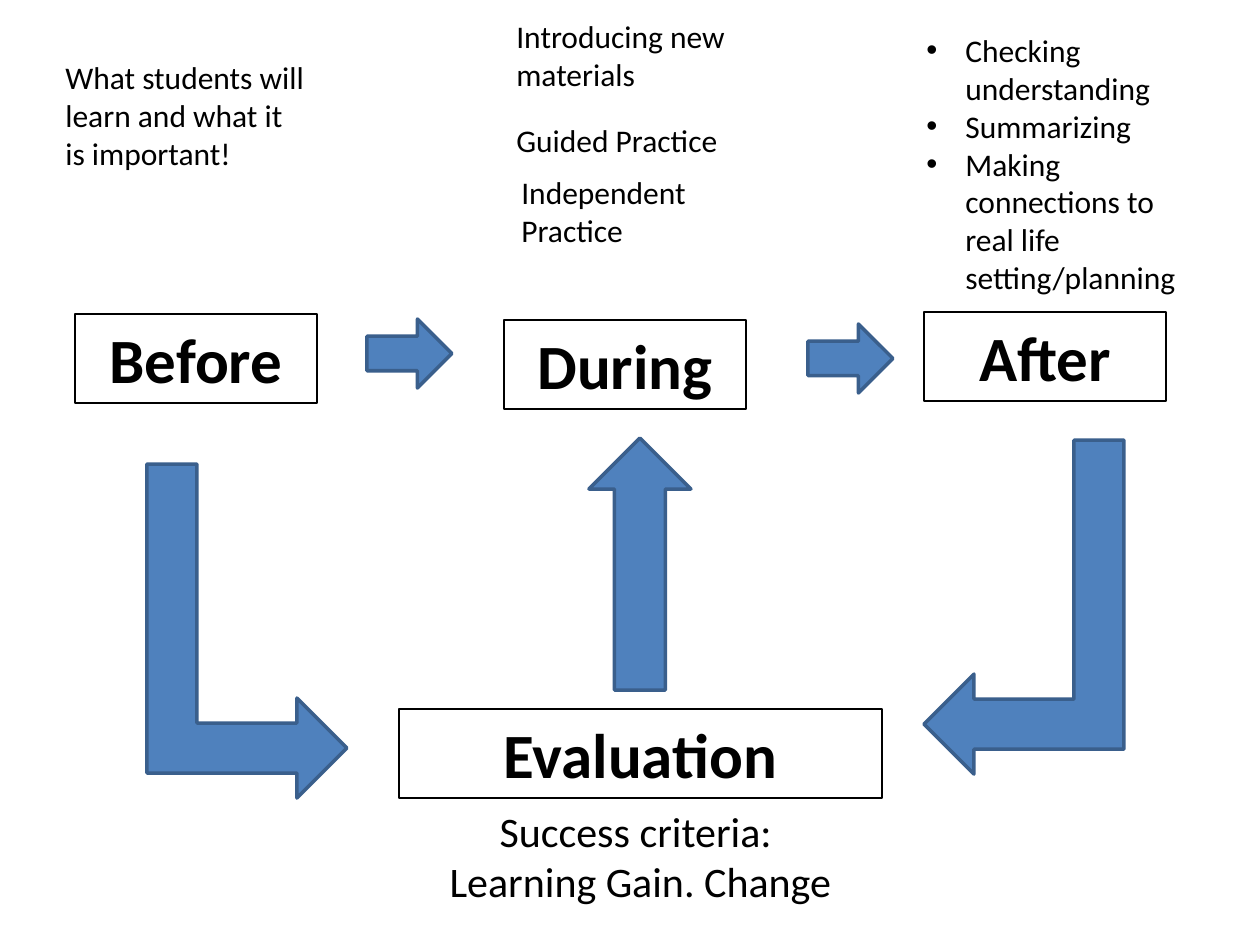
from lxml.etree import SubElement
from pptx import Presentation
from pptx.dml.color import RGBColor
from pptx.enum.shapes import MSO_SHAPE
from pptx.enum.text import MSO_ANCHOR, MSO_AUTO_SIZE, PP_ALIGN
from pptx.oxml.ns import qn
from pptx.util import Emu, Pt

BLACK = RGBColor(0x00, 0x00, 0x00)
BLUE = RGBColor(0x4F, 0x81, 0xBD)
DARK_BLUE = RGBColor(0x3A, 0x5F, 0x8C)
FONT = "Calibri"
EMU_PER_PX = 914400 / 126
BULLET_INDENT = 39

# Content: stages as (name, left, top, width)
STAGE_HEIGHT = 89
STAGES = [
    ("Before", 75, 314, 242),
    ("During", 504, 320, 242),
    ("After", 924, 312, 242),
    ("Evaluation", 399, 709, 483),
]

# Arrows as (shape, left, top, width, height, rotation, flips)
ARROWS = [
    (MSO_SHAPE.RIGHT_ARROW, 367, 319, 85, 69, 0, ()),
    (MSO_SHAPE.RIGHT_ARROW, 808, 324, 85, 69, 0, ()),
    (MSO_SHAPE.BENT_UP_ARROW, 857, 507, 334, 200, 90, ("flipV",)),
    (MSO_SHAPE.BENT_UP_ARROW, 80, 531, 334, 200, 270, ("flipH", "flipV")),
    (MSO_SHAPE.RIGHT_ARROW, 514, 513, 252, 102, 270, ()),
]

# Notes as (lines, left, top, width, height, size, alignment, bulleted)
LEFT, CENTER = PP_ALIGN.LEFT, PP_ALIGN.CENTER
NOTES = [
    (["Success criteria: ", "Learning Gain. Change"],
     399, 799, 483, 115, 24, CENTER, False),
    (["What students will learn and what it is important!"],
     53, 52, 265, 127, 18, LEFT, False),
    (["Introducing new materials"], 504, 11, 262, 89, 18, LEFT, False),
    (["Guided Practice"], 504, 115, 262, 50, 18, LEFT, False),
    (["Independent Practice"], 509, 167, 262, 89, 18, LEFT, False),
    (["Checking understanding", "Summarizing",
      "Making connections to real life setting/planning"],
     914, 25, 284, 280, 18, LEFT, True),
]


def px(*lengths):
    return [Emu(round(length * EMU_PER_PX)) for length in lengths]


def add_bullet(para):
    properties = para._p.get_or_add_pPr()
    indent = px(BULLET_INDENT)[0]
    properties.set("marL", str(indent))
    properties.set("indent", str(-indent))
    SubElement(properties, qn("a:buFont")).set("typeface", "Arial")
    SubElement(properties, qn("a:buChar")).set("char", "•")


def write(box, lines, size, alignment, bold=False, bulleted=False):
    frame = box.text_frame
    frame.word_wrap = True
    frame.auto_size = MSO_AUTO_SIZE.SHAPE_TO_FIT_TEXT
    frame.vertical_anchor = MSO_ANCHOR.TOP
    for index, line in enumerate(lines):
        para = frame.add_paragraph() if index else frame.paragraphs[0]
        para.alignment = alignment
        if bulleted:
            add_bullet(para)
        span = para.add_run()
        span.text = line
        span.font.name = FONT
        span.font.size = Pt(size)
        span.font.bold = bold
        span.font.color.rgb = BLACK


def add_outlined(page, kind, place, line_color, line_width):
    shape = page.shapes.add_shape(kind, *px(*place))
    shape.shadow.inherit = False
    shape.line.color.rgb = line_color
    shape.line.width = Pt(line_width)
    return shape


def main():
    deck = Presentation()
    deck.slide_width, deck.slide_height = px(1260, 945)
    page = deck.slides.add_slide(deck.slide_layouts[6])

    # Stage boxes
    for name, left, top, width in STAGES:
        place = (left, top, width, STAGE_HEIGHT)
        box = add_outlined(page, MSO_SHAPE.RECTANGLE, place, BLACK, 0.75)
        box.fill.background()
        write(box, [name], 36, CENTER, bold=True)

    # Arrows between the stages
    for kind, *place, rotation, flips in ARROWS:
        arrow = add_outlined(page, kind, place, DARK_BLUE, 2)
        arrow.fill.solid()
        arrow.fill.fore_color.rgb = BLUE
        arrow.rotation = rotation
        for flip in flips:
            arrow.element.spPr.get_or_add_xfrm().set(flip, "1")

    # Notes beside the stages
    for lines, *place, size, alignment, bulleted in NOTES:
        box = page.shapes.add_textbox(*px(*place))
        write(box, lines, size, alignment, bulleted=bulleted)

    deck.save("out.pptx")


if __name__ == "__main__":
    main()
